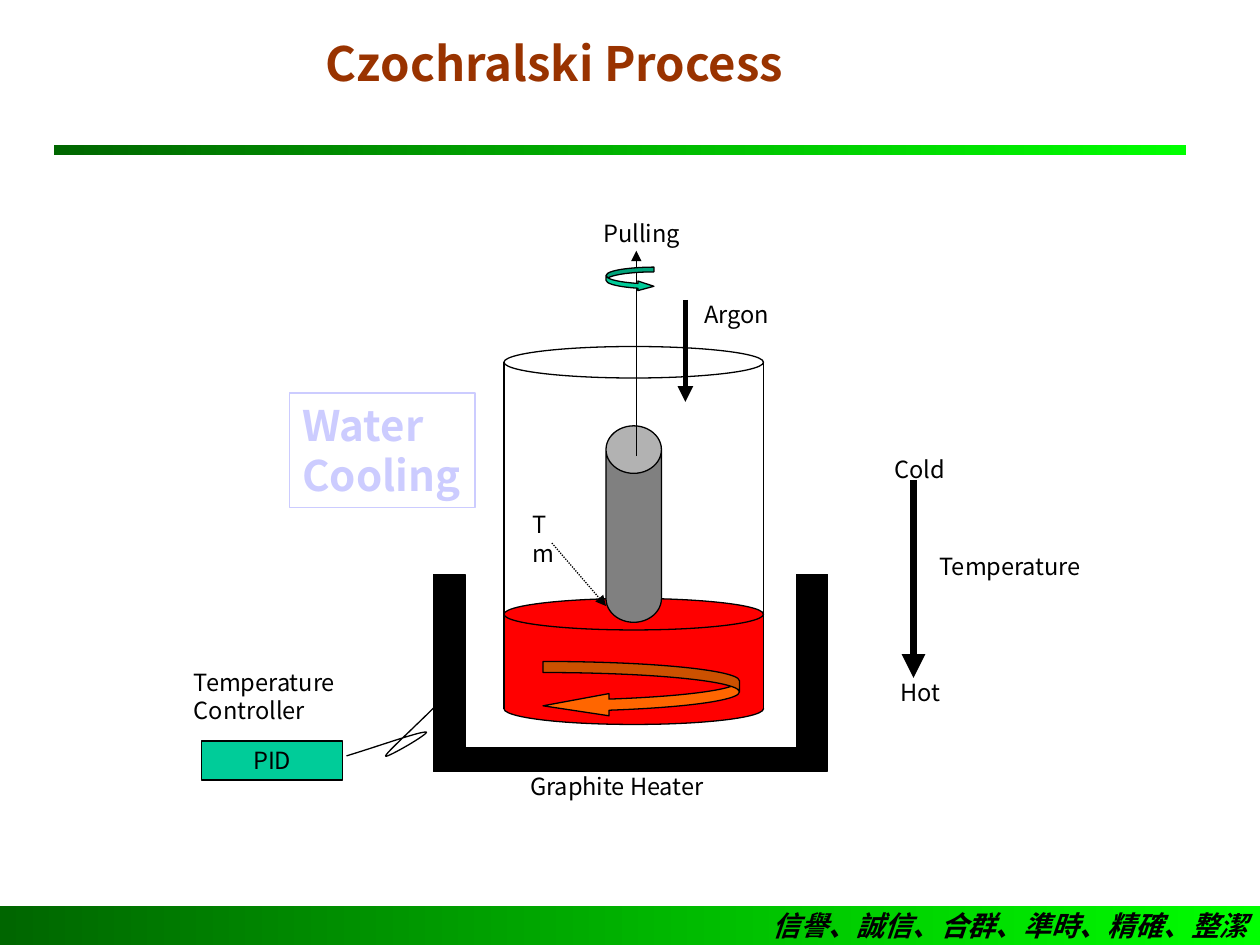
from dataclasses import dataclass
import pptx
import pptx.util
import pptx.dml.color
import pptx.enum.shapes
import pptx.enum.text
import pptx.oxml.ns
from lxml import etree

Inches = pptx.util.Inches
Pt = pptx.util.Pt
Shape = pptx.enum.shapes.MSO_SHAPE
Align = pptx.enum.text.PP_ALIGN
Anchor = pptx.enum.text.MSO_ANCHOR
qn = pptx.oxml.ns.qn


@dataclass(frozen=True)
class Theme:
    font: str = "Noto Sans CJK SC"
    title: str = "993300"
    ink: str = "000000"
    dark_green: str = "006600"
    bright_green: str = "00FF00"
    melt: str = "FF0000"
    crystal: str = "808080"
    teal: str = "00CC99"
    orange: str = "FF6600"
    pale: str = "CCCCFF"
    title_size: float = 27
    callout_size: float = 24
    footer_size: float = 16
    label_size: float = 13.5
    hairline: float = 0.75


THEME = Theme()


@dataclass(frozen=True)
class Box:
    left: float
    top: float
    width: float
    height: float

    def inner(self, x, y, width, height):
        return Box(self.left + x, self.top + y, width, height)

    def point(self, x, y):
        return Inches(self.left + x), Inches(self.top + y)

    def lengths(self):
        return [Inches(n) for n in (self.left, self.top, self.width, self.height)]


def color(value):
    return pptx.dml.color.RGBColor.from_string(value)


def outline(line, value, width=THEME.hairline):
    line.color.rgb = color(value)
    line.width = Pt(width)


def add_shape(page, kind, box, fill=None, line=THEME.ink, adjustments=()):
    shape = page.shapes.add_shape(kind, *box.lengths())
    shape.shadow.inherit = False
    if fill:
        shape.fill.solid()
        shape.fill.fore_color.rgb = color(fill)
    else:
        shape.fill.background()
    if line:
        outline(shape.line, line)
    else:
        shape.line.fill.background()
    for index, value in enumerate(adjustments):
        shape.adjustments[index] = value
    return shape


def add_band(page, box):
    band = add_shape(page, Shape.RECTANGLE, box, line=None)
    band.fill.gradient()
    band.fill.gradient_angle = 0
    for stop, value, position in zip(
        band.fill.gradient_stops, (THEME.dark_green, THEME.bright_green), (0, 1)
    ):
        stop.color.rgb = color(value)
        stop.position = position
    return band


def write(shape, lines, size=THEME.label_size, ink=THEME.ink, align=Align.LEFT,
          anchor=Anchor.TOP, bold=False, italic=False, wrap=False):
    frame = shape.text_frame
    frame.word_wrap = wrap
    frame.vertical_anchor = anchor
    frame.text = "\n".join(lines)
    for para in frame.paragraphs:
        para.alignment = align
        font = para.font
        font.name = THEME.font
        font.size = Pt(size)
        font.bold = bold
        font.italic = italic
        font.color.rgb = color(ink)
        properties = para._p.pPr.find(qn("a:defRPr"))
        etree.SubElement(properties, qn("a:ea"), typeface=THEME.font)
    return frame


def add_label(page, box, *lines, **style):
    return write(page.shapes.add_textbox(*box.lengths()), lines, **style)


def add_line(page, start, end, width=THEME.hairline, arrow=False, dash=None):
    straight = pptx.enum.shapes.MSO_CONNECTOR.STRAIGHT
    connector = page.shapes.add_connector(straight, *start, *end)
    outline(connector.line, THEME.ink, width)
    properties = connector._element.spPr
    line = properties.find(qn("a:ln"))
    if dash:
        etree.SubElement(line, qn("a:prstDash"), val=dash)
    if arrow:
        etree.SubElement(line, qn("a:tailEnd"), type="triangle")
    etree.SubElement(properties, qn("a:effectLst"))


def curve_points(start, curves, steps=16):
    points = [start]
    for first, second, end in curves:
        for step in range(1, steps + 1):
            t = step / steps
            u = 1 - t
            points.append(tuple(
                u**3 * a + 3 * u * u * t * b + 3 * u * t * t * c + t**3 * d
                for a, b, c, d in zip(start, first, second, end)
            ))
        start = end
    return points


def draw_header(page, box):
    frame = add_label(page, box.inner(1.01, 0, 5.92, 0.62), "Czochralski Process",
                      size=THEME.title_size, ink=THEME.title, align=Align.CENTER,
                      anchor=Anchor.MIDDLE, bold=True, wrap=True)
    frame.margin_left = frame.margin_right = Inches(0.04)
    frame.margin_top, frame.margin_bottom = 0, Inches(0.2)
    add_band(page, box.inner(0, 0.86, box.width, 0.08))


def draw_footer(page, box):
    frame = write(add_band(page, box), ["信譽、誠信、合群、準時、精確、整潔"],
                  size=THEME.footer_size, align=Align.RIGHT, anchor=Anchor.MIDDLE,
                  bold=True, italic=True)
    frame.margin_top = frame.margin_bottom = Inches(0.01)


def draw_chamber(page, box):
    rim, melt_top, base = 0, 2, 2.75
    half_rim = 0.125
    wall_top, wall_bottom = rim + half_rim, base + half_rim

    def ring(top, fill=None):
        add_shape(page, Shape.OVAL, box.inner(0, top, box.width, 2 * half_rim), fill)

    ring(base, THEME.melt)
    ring(rim)
    add_shape(page, Shape.RECTANGLE,
              box.inner(0, melt_top + half_rim, box.width, base - melt_top),
              THEME.melt, line=None)
    ring(melt_top, THEME.melt)
    for x in (0, box.width):
        add_line(page, box.point(x, wall_top), box.point(x, wall_bottom))
    add_shape(page, Shape.CAN, box.inner(0.81, 0.63, 0.44, 1.56), THEME.crystal,
              adjustments=[0.857])
    add_line(page, box.point(1.05, 0.87), box.point(1.05, -0.76), arrow=True)
    add_line(page, box.point(1.44, -0.37), box.point(1.44, 0.44), width=3, arrow=True)
    add_label(page, box.inner(1.49, -0.42, 0.76, 0.33), "Argon")
    add_label(page, box.inner(0.69, -1.06, 0.81, 0.33), "Pulling")
    add_shape(page, Shape.CURVED_RIGHT_ARROW, box.inner(0.81, -0.63, 0.38, 0.19),
              THEME.teal, adjustments=[0.2, 0.4, 0.667])
    add_shape(page, Shape.CURVED_LEFT_ARROW, box.inner(0.31, 2.5, 1.56, 0.44),
              THEME.orange, adjustments=[0.2, 0.4, 1.19])
    add_label(page, box.inner(0.13, 1.25, 0.45, 0.33), "Tm", wrap=True)
    add_line(page, box.point(0.38, 1.56), box.point(0.81, 2.06), arrow=True,
             dash="sysDot")


def draw_heater(page, box):
    side, floor = 0.25, 0.19
    for part in (
        box.inner(0, 0, side, box.height),
        box.inner(box.width - side, 0, side, box.height),
        box.inner(0, box.height - floor, box.width - 0.07, floor),
    ):
        add_shape(page, Shape.RECTANGLE, part, THEME.ink)
    add_label(page, box.inner(0.67, 1.52, 1.62, 0.33), "Graphite Heater")


def draw_temperature_scale(page, box):
    add_label(page, box.inner(0, 0, 0.62, 0.33), "Cold")
    add_label(page, box.inner(0.36, 0.77, 1.33, 0.33), "Temperature")
    add_label(page, box.inner(0.05, 1.77, 0.53, 0.33), "Hot")
    add_line(page, box.point(0.25, 0.25), box.point(0.25, 1.82), width=4.5, arrow=True)


def draw_controller(page, box):
    add_label(page, box.inner(0, 0, 1.33, 0.56), "Temperature", "Controller")
    unit = add_shape(page, Shape.RECTANGLE, box.inner(0.16, 0.63, 1.12, 0.31), THEME.teal)
    write(unit, ["PID"], align=Align.CENTER, anchor=Anchor.MIDDLE)
    points = curve_points((1.31, 0.75), [
        ((1.6, 0.66), (1.88, 0.56), (1.94, 0.56)),
        ((1.99, 0.56), (1.61, 0.78), (1.62, 0.75)),
        ((1.63, 0.72), (1.82, 0.55), (2, 0.37)),
    ])
    start, *rest = [box.point(x, y) for x, y in points]
    builder = page.shapes.build_freeform(*start)
    builder.add_line_segments(rest, close=False)
    wire = builder.convert_to_shape()
    wire.shadow.inherit = False
    wire.fill.background()
    outline(wire.line, THEME.ink)


def draw_cooling(page, box):
    panel = add_shape(page, Shape.RECTANGLE, box, line=THEME.pale)
    write(panel, ["Water", "Cooling"], size=THEME.callout_size, ink=THEME.pale, bold=True)


def main():
    deck = pptx.Presentation()
    deck.slide_width, deck.slide_height = Inches(10), Inches(7.5)
    page = deck.slides.add_slide(deck.slide_layouts[6])
    draw_header(page, Box(0.43, 0.29, 8.98, 0.94))
    draw_footer(page, Box(0, 7.19, 10, 0.31))
    draw_chamber(page, Box(4, 2.75, 2.06, 3))
    draw_heater(page, Box(3.44, 4.56, 3.13, 1.56))
    draw_temperature_scale(page, Box(7, 3.56, 1.69, 2.1))
    draw_controller(page, Box(1.44, 5.25, 2, 0.94))
    draw_cooling(page, Box(2.3, 3.12, 1.47, 0.91))
    deck.save("out.pptx")


if __name__ == "__main__":
    main()
